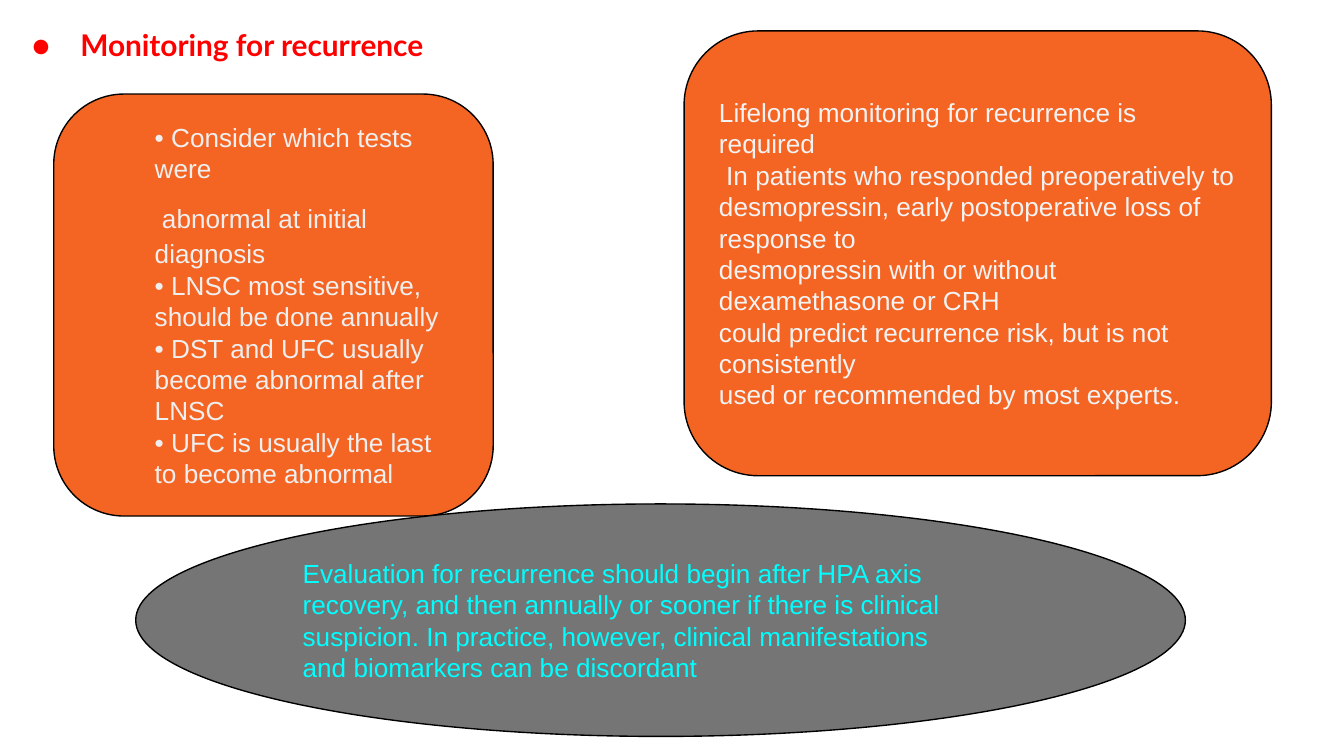
from lxml import etree
from pptx import Presentation
from pptx.dml.color import RGBColor
from pptx.enum.shapes import MSO_SHAPE
from pptx.enum.text import MSO_ANCHOR, MSO_AUTO_SIZE, PP_ALIGN
from pptx.oxml.ns import qn
from pptx.util import Inches, Pt

COLORS = {
    "title": "FF0000", "orange": "F46524", "gray": "757575", "outline": "000000",
    "tests text": "EFEFEF", "monitoring text": "F3F3F3", "evaluation text": "00FFFF",
}
SLIDE_WIDTH = 10
SLIDE_HEIGHT = SLIDE_WIDTH * 9 / 16
BODY_SIZE = 14
TITLE = "Monitoring for recurrence"
TITLE_FONT = "Lato"

# Each paragraph is a list of (text, size) runs.
TESTS = [
    [("• Consider which tests were", BODY_SIZE)],
    [(" abnormal at initial", BODY_SIZE), (" ", 24), ("diagnosis", BODY_SIZE)],
    [("• LNSC most sensitive, should be done annually", BODY_SIZE)],
    [("• DST and UFC usually become abnormal after LNSC", BODY_SIZE)],
    [("• UFC is usually the last to become abnormal", BODY_SIZE)],
]
MONITORING = [[(line, BODY_SIZE)] for line in (
    "Lifelong monitoring for recurrence is required",
    " In patients who responded preoperatively to",
    "desmopressin, early postoperative loss of response to",
    "desmopressin with or without dexamethasone or CRH",
    "could predict recurrence risk, but is not consistently",
    "used or recommended by most experts.",
)]
EVALUATION = [[(line, BODY_SIZE)] for line in (
    "Evaluation for recurrence should begin after HPA axis",
    "recovery, and then annually or sooner if there is clinical",
    "suspicion. In practice, however, clinical manifestations",
    "and biomarkers can be discordant",
)]

# preset, (left, top, width, height), fill, text colour, indent, paragraphs
PANELS = [
    (MSO_SHAPE.ROUNDED_RECTANGLE, (0.4, 0.7, 3.27, 3.14), "orange", "tests text", 0.5, TESTS),
    (MSO_SHAPE.ROUNDED_RECTANGLE, (5.09, 0.23, 4.37, 3.31), "orange", "monitoring text", 0,
     MONITORING),
    (MSO_SHAPE.OVAL, (1.01, 3.75, 7.81, 1.73), "gray", "evaluation text", 0, EVALUATION),
]


def color(name):
    return RGBColor.from_string(COLORS[name])


def prepare_frame(frame, anchor):
    frame.word_wrap = True
    frame.vertical_anchor = anchor
    frame.margin_left = frame.margin_right = Inches(0.1)
    frame.margin_top = frame.margin_bottom = Inches(0.1)


def set_indent(paragraph, left, first_line=0):
    properties = paragraph._p.get_or_add_pPr()
    properties.set("marL", str(Inches(left)))
    properties.set("indent", str(Inches(first_line)))
    return properties


def add_run(paragraph, text, size, font, color_name, bold=False):
    run = paragraph.add_run()
    run.text = text
    run.font.size = Pt(size)
    run.font.name = font
    run.font.bold = bold
    run.font.color.rgb = color(color_name)


def add_title(slide):
    box = slide.shapes.add_textbox(*map(Inches, (0, 0.1, 8.14, 0.48)))
    frame = box.text_frame
    prepare_frame(frame, MSO_ANCHOR.TOP)
    frame.auto_size = MSO_AUTO_SIZE.SHAPE_TO_FIT_TEXT
    paragraph = frame.paragraphs[0]
    properties = set_indent(paragraph, 0.5, -0.36)
    bullet_color = etree.SubElement(properties, qn("a:buClr"))
    etree.SubElement(bullet_color, qn("a:srgbClr"), val=COLORS["title"])
    etree.SubElement(properties, qn("a:buFont"), typeface=TITLE_FONT)
    etree.SubElement(properties, qn("a:buChar"), char="●")
    add_run(paragraph, TITLE, 16, TITLE_FONT, "title", bold=True)


def add_panel(slide, preset, place, fill, text_color, indent, paragraphs):
    shape = slide.shapes.add_shape(preset, *map(Inches, place))
    shape.shadow.inherit = False
    shape.fill.solid()
    shape.fill.fore_color.rgb = color(fill)
    shape.line.color.rgb = color("outline")
    shape.line.width = Pt(0.75)
    frame = shape.text_frame
    prepare_frame(frame, MSO_ANCHOR.MIDDLE)
    for index, runs in enumerate(paragraphs):
        paragraph = frame.add_paragraph() if index else frame.paragraphs[0]
        paragraph.alignment = PP_ALIGN.LEFT
        set_indent(paragraph, indent)
        for text, size in runs:
            add_run(paragraph, text, size, "Arial", text_color)


def main():
    presentation = Presentation()
    presentation.slide_width = Inches(SLIDE_WIDTH)
    presentation.slide_height = Inches(SLIDE_HEIGHT)
    slide = presentation.slides.add_slide(presentation.slide_layouts[6])
    add_title(slide)
    for panel in PANELS:
        add_panel(slide, *panel)
    presentation.save("out.pptx")


if __name__ == "__main__":
    main()
